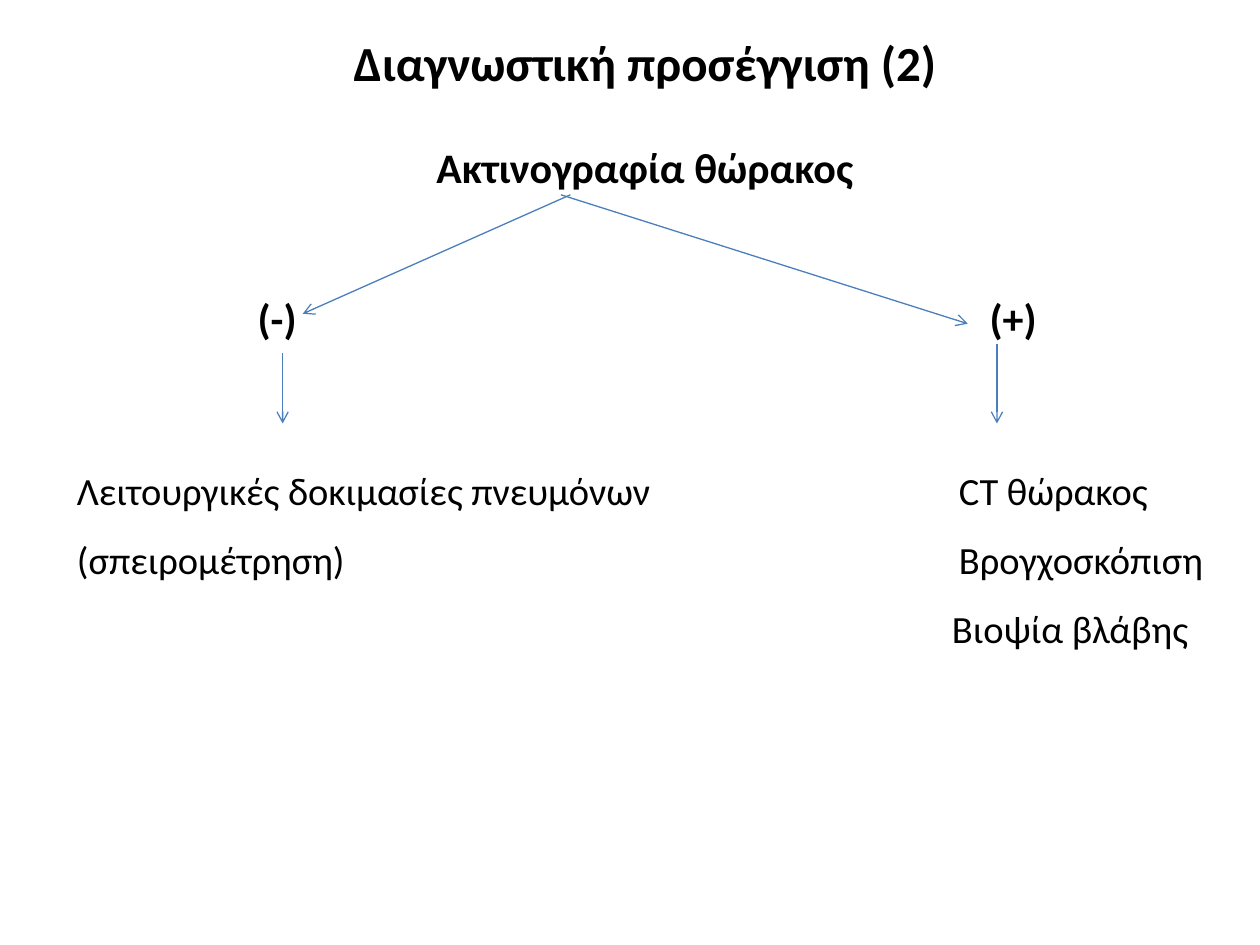
from pptx import Presentation
from pptx.dml.color import RGBColor
from pptx.enum.shapes import MSO_CONNECTOR
from pptx.enum.text import MSO_ANCHOR, MSO_AUTO_SIZE, PP_ALIGN
from pptx.oxml.ns import qn
from pptx.util import Pt
from lxml.etree import SubElement


def color(code):
    return RGBColor.from_string(code)


def write(shape, box, lines, size, bold=False, align=PP_ALIGN.LEFT, space=1.0):
    shape.left, shape.top, shape.width, shape.height = map(Pt, box)
    frame = shape.text_frame
    frame.text = "\n".join(lines)
    frame.word_wrap = True
    frame.auto_size = MSO_AUTO_SIZE.NONE
    frame.vertical_anchor = MSO_ANCHOR.TOP
    frame.margin_left = frame.margin_right = 0
    frame.margin_top = frame.margin_bottom = 0
    for para in frame.paragraphs:
        props = para._p.get_or_add_pPr()
        props.set("marL", "0")
        props.set("indent", "0")
        SubElement(props, qn("a:buNone"))
        para.alignment = align
        para.line_spacing = space
        para.space_before = para.space_after = Pt(0)
        font = para.font
        font.name, font.size, font.bold = "Calibri", Pt(size), bold
        font.color.rgb = color("000000")


def label(slide, box, text, align=PP_ALIGN.LEFT):
    shape = slide.shapes.add_textbox(*map(Pt, box))
    write(shape, box, [text], 24, True, align)


def arrow(slide, start, end):
    line = slide.shapes.add_connector(
        MSO_CONNECTOR.STRAIGHT, *map(Pt, start + end))
    line.line.color.rgb = color("4B7EBC")
    line.line.width = Pt(0.75)
    props = line._element.spPr
    SubElement(props.find(qn("a:ln")), qn("a:tailEnd"), type="arrow")
    SubElement(props, qn("a:effectLst"))


def header(slide, box):
    left, top, width, _ = box
    write(slide.shapes.title, (left, top, width, 35),
          ["Διαγνωστική προσέγγιση (2)"], 28, True, PP_ALIGN.CENTER)
    label(slide, (left, top + 62.4, width, 30),
          "Ακτινογραφία θώρακος", PP_ALIGN.CENTER)


def branch(slide, body, box, sign, lines, shift, fork, drop):
    left, top, width, height = box
    label(slide, (left + shift, top, 40, 30), sign)
    write(body, (left, top + 86.2, width, height - 86.2), lines, 22, space=1.5)
    arrow(slide, *fork)
    arrow(slide, *drop)


def main():
    deck = Presentation()
    deck.slide_width, deck.slide_height = Pt(720), Pt(540)
    slide = deck.slides.add_slide(deck.slide_layouts[3])
    _, left, right = list(slide.placeholders)[:3]
    header(slide, (37, 18.7, 663, 95))
    branch(slide, left, (44, 167.4, 400, 220), "(-)",
           ["Λειτουργικές δοκιμασίες πνευμόνων", "(σπειρομέτρηση)"], 103.2,
           ((326, 111.3), (173, 179.3)), ((161.5, 202), (161.5, 242)))
    branch(slide, right, (544, 167.4, 160, 220), "(+)",
           ["CT θώρακος", "Βρογχοσκόπιση", "Βιοψία βλάβης"], 21.5,
           ((320.5, 111.3), (553, 185)), ((569.7, 196.5), (569.7, 242)))
    for para in right.text_frame.paragraphs[:2]:
        para._p.get_or_add_pPr().set("marL", str(Pt(4)))
    deck.save("out.pptx")


if __name__ == "__main__":
    main()
